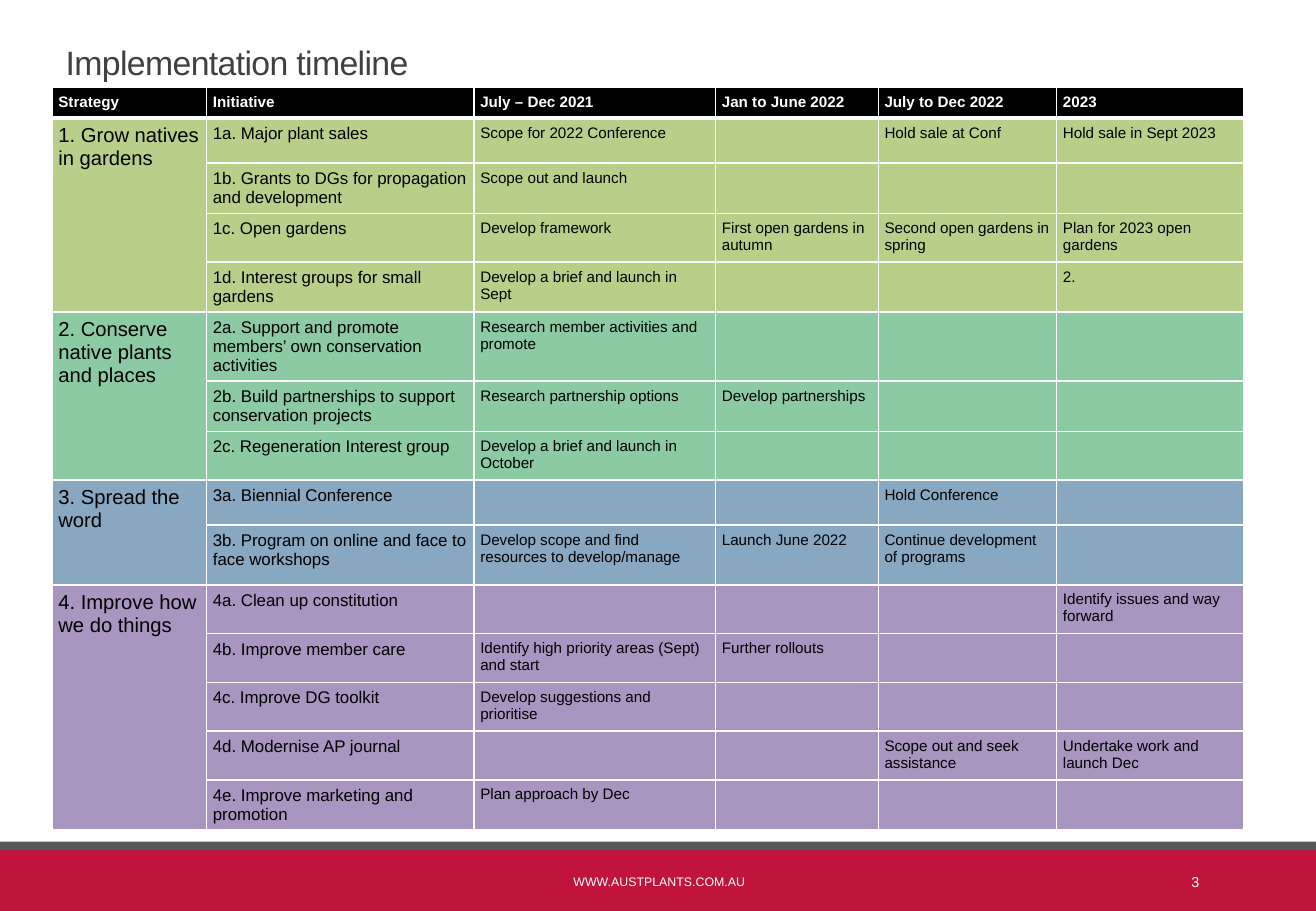
"""Builds the implementation timeline slide: strategies, initiatives and half-year steps."""
from lxml import etree
from pptx import Presentation
from pptx.dml.color import RGBColor
from pptx.enum.shapes import MSO_SHAPE
from pptx.enum.text import MSO_ANCHOR, PP_ALIGN
from pptx.oxml.ns import qn
from pptx.util import Cm, Pt

RECTANGLE = MSO_SHAPE.RECTANGLE
BOTTOM, MIDDLE = MSO_ANCHOR.BOTTOM, MSO_ANCHOR.MIDDLE
LEFT, CENTER, RIGHT = PP_ALIGN.LEFT, PP_ALIGN.CENTER, PP_ALIGN.RIGHT

THEME = {
    "font": "Arial",
    "title": "404040", "text": "000000", "light": "FFFFFF", "header": "000000",
    "footer": "C0143C", "stripe": "54585B",
    "gardens": ("9BBB59", 70), "conserve": ("5BB47C", 70),
    "word": ("5F8CAB", 75), "improve": ("8064A3", 68),
    "title_size": 20, "strategy_size": 12, "initiative_size": 10, "step_size": 9,
    "address_size": 7.3, "number_size": 8.5,
}

HEADINGS = ["Strategy", "Initiative", "July – Dec 2021", "Jan to June 2022", "July to Dec 2022", "2023"]
COLUMN_WIDTHS = [3.23, 5.59, 5.05, 3.4, 3.73, 3.91]
HEADER_HEIGHT = 0.64
STRATEGIES = [
    ("1. Grow natives in gardens", "gardens", [
        (0.94, "1a. Major plant sales", "Scope for 2022 Conference", "", "Hold sale at Conf", "Hold sale in Sept 2023"),
        (1.02, "1b. Grants to DGs for propagation and development", "Scope out and launch", "", "", ""),
        (1.02, "1c. Open gardens", "Develop framework", "First open gardens in autumn",
         "Second open gardens in spring", "Plan for 2023 open gardens"),
        (1.02, "1d. Interest groups for small gardens", "Develop a brief and launch in Sept", "", "", "2."),
    ]),
    ("2. Conserve native plants and places", "conserve", [
        (1.02, "2a. Support and promote members’ own conservation activities",
         "Research member activities and promote", "", "", ""),
        (1.02, "2b. Build partnerships to support conservation projects",
         "Research partnership options", "Develop partnerships", "", ""),
        (1.02, "2c. Regeneration Interest group", "Develop a brief and launch in October", "", "", ""),
    ]),
    ("3. Spread the word", "word", [
        (0.94, "3a. Biennial Conference", "", "", "Hold Conference", ""),
        (1.25, "3b. Program on online and face to face workshops",
         "Develop scope and find resources to develop/manage", "Launch June 2022",
         "Continue development of programs", ""),
    ]),
    ("4. Improve how we do things", "improve", [
        (1.02, "4a. Clean up constitution", "", "", "", "Identify issues and way forward"),
        (1.02, "4b. Improve member care", "Identify high priority areas (Sept) and start", "Further rollouts", "", ""),
        (1.02, "4c. Improve DG toolkit", "Develop suggestions and prioritise", "", "", ""),
        (1.02, "4d. Modernise AP journal", "", "", "Scope out and seek assistance", "Undertake work and launch Dec"),
        (0.94, "4e. Improve marketing and promotion", "Plan approach by Dec", "", "", ""),
    ]),
]


def write(paragraph, text, size, color, bold=False, align=LEFT):
    paragraph.alignment = align
    run = paragraph.add_run()
    run.text = text
    run.font.name = THEME["font"]
    run.font.size = Pt(size)
    run.font.bold = bold
    run.font.color.rgb = RGBColor.from_string(color)
    return run


def format_cell(cell, text, size, color, fill, alpha=100, bold=False, top=1, bottom=1):
    cell.margin_left = cell.margin_right = cell.margin_top = cell.margin_bottom = Cm(0.13)
    paragraph = cell.text_frame.paragraphs[0]
    if text:
        write(paragraph, text, size, color, bold)
    else:
        etree.SubElement(paragraph._p, qn("a:endParaRPr"), sz=str(size * 100))
    properties = cell._tc.get_or_add_tcPr()
    for side, width in (("L", 1), ("R", 1), ("T", top), ("B", bottom)):
        border = etree.SubElement(properties, qn(f"a:ln{side}"), w=str(Pt(width)))
        paint = etree.SubElement(border, qn("a:solidFill"))
        etree.SubElement(paint, qn("a:srgbClr"), val=THEME["light"])
    cell.fill.solid()
    cell.fill.fore_color.rgb = RGBColor.from_string(fill)
    if alpha < 100:
        shade = properties.find(qn("a:solidFill")).find(qn("a:srgbClr"))
        etree.SubElement(shade, qn("a:alpha"), val=str(alpha * 1000))


presentation = Presentation()
presentation.slide_width, presentation.slide_height = Cm(27.51), Cm(19.05)
slide = presentation.slides.add_slide(presentation.slide_layouts[5])

for top, height, color in ((17.78, 1.27, "footer"), (17.6, 0.18, "stripe")):
    band = slide.shapes.add_shape(RECTANGLE, 0, Cm(top), presentation.slide_width, Cm(height))
    band.shadow.inherit = False
    band.fill.solid()
    band.fill.fore_color.rgb = RGBColor.from_string(THEME[color])
    band.line.fill.background()

title = slide.shapes.title
title.left, title.top, title.width, title.height = Cm(1.12), Cm(0.1), Cm(22.71), Cm(1.75)
title.text_frame.vertical_anchor = BOTTOM
heading = title.text_frame.paragraphs[0]
heading.line_spacing = 0.85
heading_run = write(heading, "Implementation timeline", THEME["title_size"], THEME["title"])
heading_run._r.get_or_add_rPr().set("spc", "-40")

row_heights = [HEADER_HEIGHT] + [row[0] for _, _, rows in STRATEGIES for row in rows]
timeline = slide.shapes.add_table(
    len(row_heights), len(HEADINGS), Cm(1.09), Cm(1.83), Cm(sum(COLUMN_WIDTHS)), Cm(sum(row_heights))).table
for column, width in zip(timeline.columns, COLUMN_WIDTHS):
    column.width = Cm(width)
for row, height in zip(timeline.rows, row_heights):
    row.height = Cm(height)

for column, label in enumerate(HEADINGS):
    format_cell(timeline.cell(0, column), label, THEME["step_size"], THEME["light"], THEME["header"],
                bold=True, bottom=3)

sizes = [THEME["strategy_size"], THEME["initiative_size"]] + [THEME["step_size"]] * 4
line = 1
for strategy, shade_name, initiatives in STRATEGIES:
    first_line = line
    fill, alpha = THEME[shade_name]
    for _, *entries in initiatives:
        labels = [strategy if line == first_line else ""] + entries
        for column, (label, size) in enumerate(zip(labels, sizes)):
            format_cell(timeline.cell(line, column), label, size, THEME["text"], fill, alpha,
                        top=3 if line == 1 else 1)
        line += 1
    timeline.cell(first_line, 0).merge(timeline.cell(line - 1, 0))

for left, width, text, size, align in (
        (8.33, 10.9, "WWW.AUSTPLANTS.COM.AU", THEME["address_size"], CENTER),
        (22.35, 2.97, "3", THEME["number_size"], RIGHT)):
    footer = slide.shapes.add_textbox(Cm(left), Cm(17.93), Cm(width), Cm(1.02)).text_frame
    footer.word_wrap = True
    footer.vertical_anchor = MIDDLE
    write(footer.paragraphs[0], text, size, THEME["light"], align=align)

presentation.save("out.pptx")
